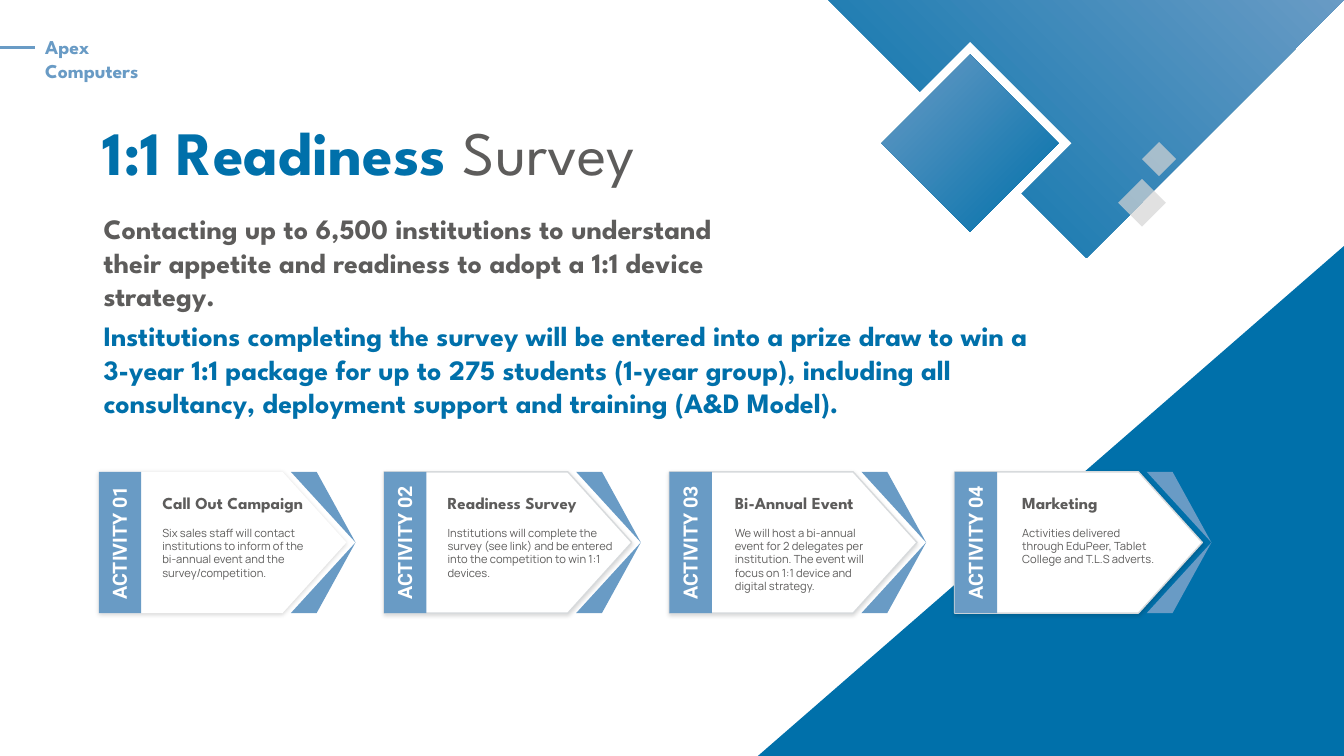
from dataclasses import dataclass

from lxml.etree import SubElement
from pptx import Presentation
from pptx.dml.color import RGBColor
from pptx.enum.shapes import MSO_CONNECTOR, MSO_SHAPE
from pptx.enum.text import MSO_ANCHOR, MSO_AUTO_SIZE, PP_ALIGN
from pptx.oxml.ns import qn
from pptx.util import Cm, Pt


@dataclass(frozen=True)
class Theme:
    """Colours, fonts and type sizes of the slide."""
    blue: str = "0070AA"
    sky: str = "699BC5"
    grey: str = "5D5C5B"
    mist: str = "D5D5D5"
    edge: str = "D7DADC"
    white: str = "FFFFFF"
    display: str = "League Spartan"
    label: str = "Roboto"
    body: str = "Manrope"
    title_size: int = 44
    lead_size: int = 20
    label_size: int = 14
    heading_size: int = 12
    body_size: int = 8


THEME = Theme()
CARD_LEFT, CARD_TOP, CARD_STEP, CARD_HEIGHT = 2.49, 11.89, 7.19, 3.56
CARDS = [
    ("Call Out Campaign",
     "Six sales staff will contact institutions to inform of the bi-annual event and the survey/competition.",
     1.35, 4.17),
    ("Readiness Survey",
     "Institutions will complete the survey (see link) and be entered into the competition to win 1:1 devices.",
     1.35, 4.67),
    ("Bi-Annual Event",
     "We will host a bi-annual event for 2 delegates per institution. The event will focus on 1:1 device "
     "and digital strategy.",
     1.4, 4.24),
    ("Marketing",
     "Activities delivered through EduPeer, Tablet College and T.L.S adverts.",
     1.45, 3.89),
]


def add_text(para, text, size, color, font=THEME.display, bold=True):
    """Add formatted text to a paragraph, breaking lines at newlines."""
    for index, line in enumerate(text.split("\n")):
        if index:
            para.add_line_break()
        span = para.add_run()
        span.text = line
        span.font.name = font
        span.font.size = Pt(size)
        span.font.bold = bold
        span.font.color.rgb = RGBColor.from_string(color)


def add_box(shapes, left, top, width, height, wrap=True):
    """Add a text box and return it."""
    box = shapes.add_textbox(Cm(left), Cm(top), Cm(width), Cm(height))
    box.text_frame.word_wrap = wrap
    return box


def paint(shape, color, line=None, alpha=None):
    """Give a shape a flat fill, an optional outline and no shadow."""
    shape.shadow.inherit = False
    shape.fill.solid()
    shape.fill.fore_color.rgb = RGBColor.from_string(color)
    if alpha:
        color_node = shape._element.spPr.find(".//" + qn("a:srgbClr"))
        SubElement(color_node, qn("a:alpha"), val=str(alpha * 1000))
    if line:
        shape.line.color.rgb = RGBColor.from_string(line)
        shape.line.width = Pt(1)
    else:
        shape.line.fill.background()


def paint_gradient(shape, angle):
    """Fill a shape with the blue to sky gradient."""
    shape.fill.gradient()
    shape.fill.gradient_angle = angle
    for stop, color in zip(shape.fill.gradient_stops, (THEME.blue, THEME.sky)):
        stop.color.rgb = RGBColor.from_string(color)


def add_soft_shadow(shape):
    """Add a faint shadow below a shape."""
    effects = shape._element.spPr.find(qn("a:effectLst"))
    shadow = SubElement(effects, qn("a:outerShdw"), blurRad=str(Pt(3)), dist=str(Pt(1)),
                        dir="5400000", algn="t", rotWithShape="0")
    color = SubElement(shadow, qn("a:prstClr"), val="black")
    SubElement(color, qn("a:alpha"), val="15000")


def add_polygon(shapes, points, color, **style):
    """Add a closed outline through points given in centimetres."""
    corners = [(Cm(x), Cm(y)) for x, y in points]
    builder = shapes.build_freeform(*corners[0])
    builder.add_line_segments(corners[1:], close=True)
    shape = builder.convert_to_shape()
    paint(shape, color, **style)
    return shape


def add_diamond(shapes, x, y, half, color, **style):
    """Add a diamond around a centre."""
    points = [(x, y + half), (x - half, y), (x, y - half), (x + half, y)]
    return add_polygon(shapes, points, color, **style)


def add_rule(shapes, left, right, y):
    """Add a horizontal accent line."""
    rule = shapes.add_connector(MSO_CONNECTOR.STRAIGHT, Cm(left), Cm(y), Cm(right), Cm(y))
    rule.line.color.rgb = RGBColor.from_string(THEME.sky)
    rule.line.width = Pt(2.25)
    SubElement(rule._element.spPr, qn("a:effectLst"))


def add_card(page, index, heading, body, indent, width):
    """Add one activity card with its arrow, side label and text."""
    shapes = page.shapes.add_group_shape().shapes
    left, top = CARD_LEFT + index * CARD_STEP, CARD_TOP
    middle, bottom = top + CARD_HEIGHT / 2, top + CARD_HEIGHT
    panel = add_polygon(
        shapes,
        [(left, top), (left + 4.63, top), (left + 6.24, middle), (left + 4.63, bottom), (left, bottom)],
        THEME.white, line=THEME.edge if index else None)
    add_soft_shadow(panel)
    inner, outer, tip = left + 4.84, left + 5.49, left + 6.47
    add_polygon(
        shapes,
        [(outer, top), (inner, top), (tip, middle), (inner, bottom), (outer, bottom), (tip, middle)],
        THEME.sky)
    bar = shapes.add_shape(MSO_SHAPE.RECTANGLE, Cm(left), Cm(top), Cm(1.07), Cm(CARD_HEIGHT))
    paint(bar, THEME.sky)

    label = add_box(shapes, left - 0.93, middle - 0.3, 2.9, 0.61, wrap=False)
    label.rotation = 270
    frame = label.text_frame
    frame.margin_left = frame.margin_right = frame.margin_top = frame.margin_bottom = 0
    para = frame.paragraphs[0]
    para.alignment = PP_ALIGN.CENTER
    add_text(para, f"ACTIVITY {index + 1:02}", THEME.label_size, THEME.white, font=THEME.label)

    frame = add_box(shapes, left + indent, 12.3, width, 2.5).text_frame
    add_text(frame.paragraphs[0], heading, THEME.heading_size, THEME.grey)
    para = frame.add_paragraph()
    para.space_before = Pt(9)
    add_text(para, body, THEME.body_size, THEME.grey, font=THEME.body, bold=False)


def add_decoration(page):
    """Add the blue corners and the diamonds."""
    shapes = page.shapes
    add_polygon(shapes, [(33.87, 6.2), (19.1, 19.05), (33.87, 19.05)], THEME.blue)
    corner = add_polygon(shapes, [(33.87, 0), (27.38, 6.5), (20.88, 0)], THEME.blue)
    paint_gradient(corner, 45)
    add_diamond(shapes, 24.45, 3.61, 2.55, THEME.white)
    paint_gradient(add_diamond(shapes, 24.45, 3.61, 2.23, THEME.blue), 135)
    add_diamond(shapes, 28.78, 5.11, 0.6, THEME.mist, alpha=70)
    add_diamond(shapes, 29.21, 4.01, 0.43, THEME.mist, alpha=70)


def fill_title(page):
    """Place and format the slide title."""
    title = page.shapes.title
    title.left, title.top, title.width, title.height = Cm(2.34), Cm(2.74), Cm(14.05), Cm(2.13)
    frame = title.text_frame
    frame.word_wrap = False
    frame.auto_size = MSO_AUTO_SIZE.NONE
    frame.vertical_anchor = MSO_ANCHOR.TOP
    para = frame.paragraphs[0]
    para.alignment = PP_ALIGN.LEFT
    add_text(para, "1:1 Readiness ", THEME.title_size, THEME.blue)
    add_text(para, "Survey", THEME.title_size, THEME.grey, bold=False)


def main():
    """Build and save the slide."""
    deck = Presentation()
    deck.slide_width, deck.slide_height = Cm(33.87), Cm(19.05)
    page = deck.slides.add_slide(deck.slide_layouts[5])
    add_decoration(page)
    fill_title(page)
    add_rule(page.shapes, 0, 0.89, 1.19)
    name = add_box(page.shapes, 0.89, 0.76, 3.05, 1.47)
    add_text(name.text_frame.paragraphs[0], "Apex Computers", THEME.label_size, THEME.sky)
    lead = add_box(page.shapes, 2.36, 5.21, 17.35, 2.82)
    add_text(lead.text_frame.paragraphs[0],
             "Contacting up to 6,500 institutions to understand their appetite and readiness "
             "to adopt a 1:1 device strategy.", THEME.lead_size, THEME.grey)
    for index, card in enumerate(CARDS):
        add_card(page, index, *card)
    prize = add_box(page.shapes, 2.36, 7.9, 24.64, 2.82)
    add_text(prize.text_frame.paragraphs[0],
             "Institutions completing the survey will be entered into a prize draw to win a \n"
             "3-year 1:1 package for up to 275 students (1-year group), including all consultancy, "
             "deployment support and training (A&D Model).", THEME.lead_size, THEME.blue)
    deck.save("out.pptx")


if __name__ == "__main__":
    main()
